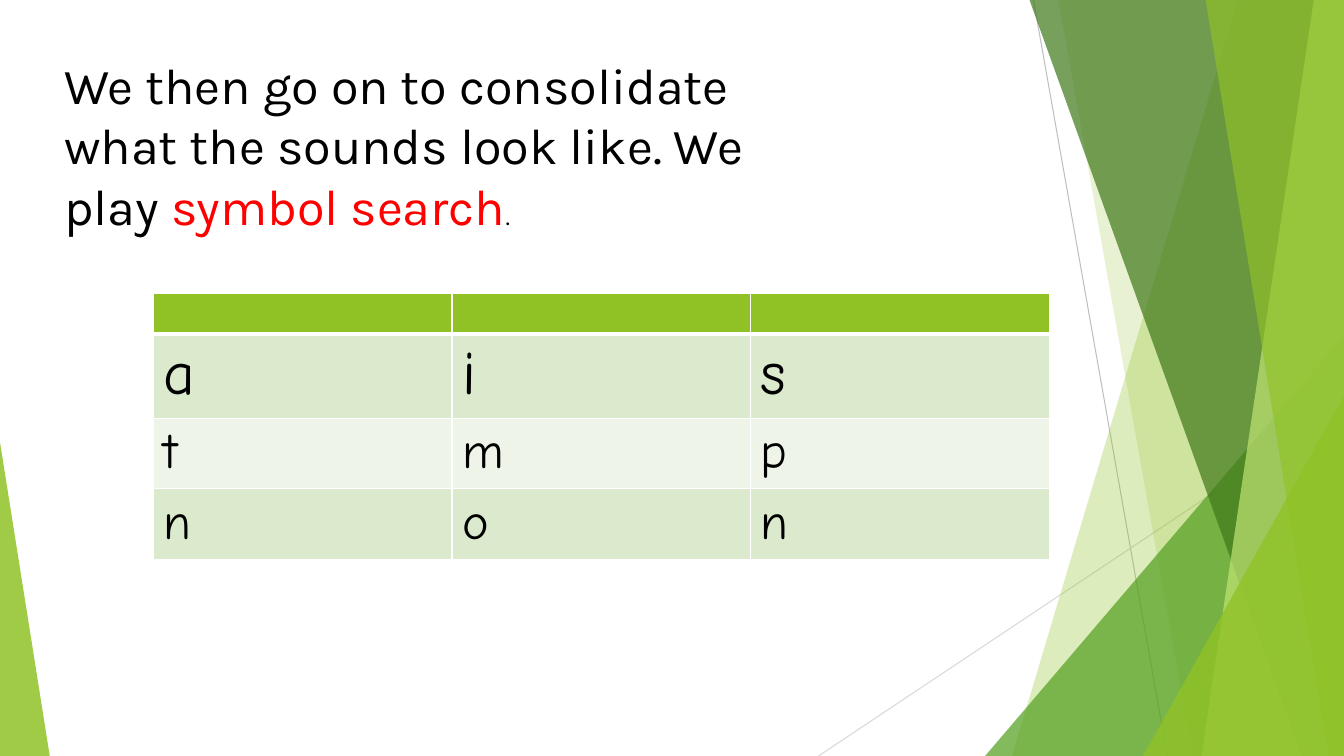
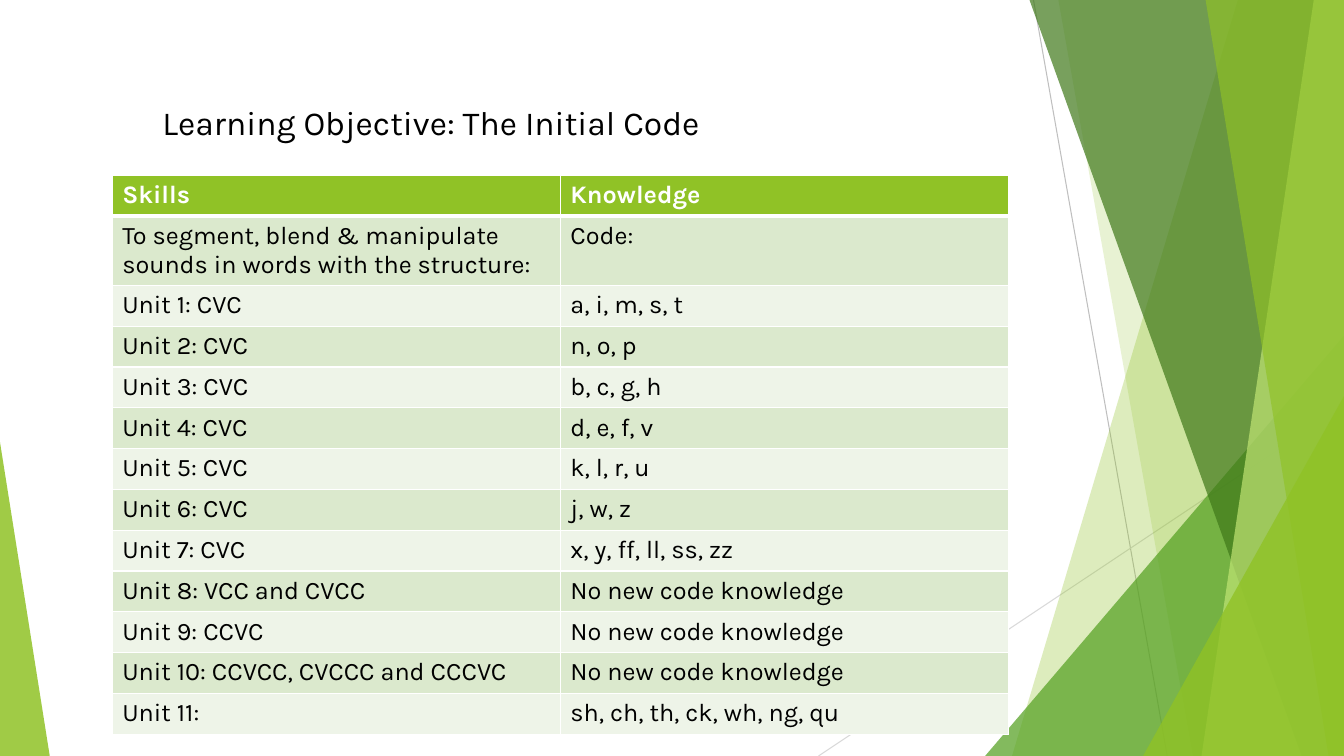
from dataclasses import dataclass

from lxml import etree
from pptx import Presentation
from pptx.dml.color import RGBColor
from pptx.enum.shapes import MSO_CONNECTOR, MSO_SHAPE
from pptx.oxml.ns import qn
from pptx.util import Inches, Pt

STRAIGHT = MSO_CONNECTOR.STRAIGHT
TRIANGLE = MSO_SHAPE.ISOSCELES_TRIANGLE
WIDTH, HEIGHT = Inches(13.33), Inches(7.5)
BLANK_LAYOUT = 6


@dataclass(frozen=True)
class Theme:
    """Colours, fonts and type sizes of the deck."""

    lime: str = "90C226"
    pale_lime: str = "C0E474"
    green: str = "54A021"
    forest: str = "3F7819"
    odd_band: str = "DBE9CD"
    even_band: str = "EEF4E8"
    white: str = "FFFFFF"
    black: str = "000000"
    red: str = "FF0000"
    dark_line: str = "BFBFBF"
    light_line: str = "D9D9D9"
    text_font: str = "Karla"
    letter_font: str = "Comic Neue"
    body: int = 18
    heading: int = 24
    statement: int = 36
    large_letter: int = 44
    thin: float = 1
    thick: float = 3


THEME = Theme()


@dataclass(frozen=True)
class Box:
    """A region given in percent of the slide's width and height."""

    left: float
    top: float
    width: float
    height: float

    def emu(self):
        """Return left, top, width and height as lengths."""
        return (*point(self.left, self.top), *point(self.width, self.height))

    def spot(self, x, y):
        """Return the point at x and y percent of this region."""
        return point(self.left + self.width * x / 100, self.top + self.height * y / 100)

    def inner(self, left, top, width, height):
        """Return a region given in percent of this one."""
        return Box(self.left + self.width * left / 100, self.top + self.height * top / 100,
                   self.width * width / 100, self.height * height / 100)


def point(x, y):
    """Turn percentages of the slide into a pair of lengths."""
    return round(WIDTH * x / 100), round(HEIGHT * y / 100)


SLIDE_BOX = Box(0, 0, 100, 100)


def add_text(paragraph, text, *, size=THEME.body, color=THEME.black,
             font=THEME.text_font, bold=False):
    """Append one formatted run to a paragraph."""
    run = paragraph.add_run()
    run.text = text
    run.font.size = Pt(size)
    run.font.name = font
    run.font.bold = bold
    run.font.color.rgb = RGBColor.from_string(color)


def add_text_box(slide, box, *runs):
    """Place a wrapped text box holding (text, format) runs."""
    frame = slide.shapes.add_textbox(*box.emu()).text_frame
    frame.word_wrap = True
    for text, style in runs:
        add_text(frame.paragraphs[0], text, **style)


def paint(shape, color, opacity):
    """Give a shape a translucent fill without line or shadow."""
    shape.shadow.inherit = False
    shape.line.fill.background()
    shape.fill.solid()
    shape.fill.fore_color.rgb = RGBColor.from_string(color)
    tint = shape.element.spPr.find(qn("a:solidFill"))[0]
    etree.SubElement(tint, qn("a:alpha")).set("val", str(opacity * 1000))


def add_hairline(slide, box, start, end, color):
    """Draw a thin straight line between two spots of the box."""
    line = slide.shapes.add_connector(STRAIGHT, *box.spot(*start), *box.spot(*end))
    line.line.color.rgb = RGBColor.from_string(color)
    line.line.width = Pt(0.75)
    etree.SubElement(line.element.spPr, qn("a:effectLst"))


def add_veil(slide, box, top_left, bottom_left, color, opacity):
    """Draw a slanted band that runs to the right edge of the box."""
    corners = [box.spot(*spot) for spot in
               ((top_left, 0), (100, 0), (100, 100), (bottom_left, 100))]
    builder = slide.shapes.build_freeform(*corners[0])
    builder.add_line_segments(corners[1:], close=True)
    paint(builder.convert_to_shape(), color, opacity)


def add_wedge(slide, box, apex, color, opacity):
    """Draw a triangle whose apex lies at a share of its width."""
    wedge = slide.shapes.add_shape(TRIANGLE, *box.emu())
    wedge.adjustments[0] = apex
    paint(wedge, color, opacity)


def draw_facets(slide, box):
    """Draw the green facets and hairlines in the box."""
    add_hairline(slide, box, (76.9, 0), (86.85, 100), THEME.dark_line)
    add_hairline(slide, box, (100, 53.7), (60.9, 100), THEME.light_line)
    add_veil(slide, box, 92.1, 75.3, THEME.lime, 30)
    add_veil(slide, box, 78.75, 88.75, THEME.lime, 20)
    add_wedge(slide, box.inner(73.3, 44.4, 26.7, 55.6), 1, THEME.green, 72)
    add_veil(slide, box, 76.6, 96.85, THEME.forest, 70)
    add_veil(slide, box, 97.75, 89.4, THEME.pale_lime, 70)
    add_veil(slide, box, 89.7, 98.85, THEME.lime, 65)
    add_wedge(slide, box.inner(85.05, 52.4, 14.95, 47.6), 1, THEME.lime, 80)
    add_wedge(slide, box.inner(0, 58.5, 3.7, 41.5), 0, THEME.lime, 85)


def share_facets(slide, layout):
    """Move the facets from a new slide to the layout all slides use."""
    for placeholder in list(layout.placeholders):
        layout.shapes.element.remove(placeholder.element)
    draw_facets(slide, SLIDE_BOX)
    for shape in list(slide.shapes):
        layout.shapes.element.append(shape.element)


def add_borders(cell, top, bottom):
    """Rule a cell in white, with its own top and bottom widths."""
    properties = cell._tc.get_or_add_tcPr()
    for side, width in (("L", THEME.thin), ("R", THEME.thin), ("T", top), ("B", bottom)):
        border = etree.SubElement(properties, qn(f"a:ln{side}"), w=str(Pt(width)))
        fill = etree.SubElement(border, qn("a:solidFill"))
        etree.SubElement(fill, qn("a:srgbClr"), val=THEME.white)


def add_banded_table(slide, box, rows, heights, styles):
    """Place a table with a lime header and alternating bands."""
    table = slide.shapes.add_table(len(rows), len(rows[0]), *box.emu()).table
    for index, (texts, height, style) in enumerate(zip(rows, heights, styles)):
        table.rows[index].height = point(0, height)[1]
        band = THEME.odd_band if index % 2 else THEME.even_band
        for column, text in enumerate(texts):
            cell = table.cell(index, column)
            add_borders(cell, THEME.thick if index == 1 else THEME.thin,
                        THEME.thin if index else THEME.thick)
            cell.fill.solid()
            cell.fill.fore_color.rgb = RGBColor.from_string(band if index else THEME.lime)
            if text:
                add_text(cell.text_frame.paragraphs[0], text, **style)


def fill_symbol_search(slide, box):
    """Lay out the symbol search statement and its letter grid."""
    large = {"size": THEME.statement}
    add_text_box(slide, box.inner(4.05, 6.5, 54.75, 25.6),
                 ("We then go on to consolidate what the sounds look like. We play ", large),
                 ("symbol search", {**large, "color": THEME.red}),
                 (".", {}))
    letter = {"size": THEME.statement, "font": THEME.letter_font}
    first = {**letter, "size": THEME.large_letter}
    add_banded_table(slide, box.inner(11.4, 38.8, 66.7, 35.1),
                     [("", "", ""), "ais", "tmp", "non"],
                     [5.4, 11.1, 9.3, 9.3],
                     [{}, first, letter, letter])


def fill_initial_code(slide, box):
    """Lay out the learning objective and its table of units."""
    no_new = "No new code knowledge"
    units = [
        ("CVC", "a, i, m, s, t"),
        ("CVC", "n, o, p"),
        ("CVC", "b, c, g, h"),
        ("CVC", "d, e, f, v"),
        ("CVC", "k, l, r, u"),
        ("CVC", "j, w, z"),
        ("CVC", "x, y, ff, ll, ss, zz"),
        ("VCC and CVCC", no_new),
        ("CCVC", no_new),
        ("CCVCC, CVCCC and CCCVC", no_new),
        ("", "sh, ch, th, ck, wh, ng, qu"),
    ]
    rows = [("Skills", "Knowledge"),
            ("To segment, blend & manipulate sounds in words with the structure:", "Code:")]
    rows += [(f"Unit {number}: {structure}".strip(), code)
             for number, (structure, code) in enumerate(units, 1)]
    header = {"color": THEME.white, "bold": True}
    add_banded_table(slide, box.inner(8.35, 23.2, 66.7, 73.9), rows,
                     [5.4, 9.1] + [5.4] * len(units),
                     [header] + [{}] * (len(rows) - 1))
    add_text_box(slide, box.inner(11.35, 12.8, 47.6, 6.7),
                 ("Learning Objective: The Initial Code", {"size": THEME.heading}))


def main():
    """Build and save the presentation."""
    presentation = Presentation()
    presentation.slide_width, presentation.slide_height = WIDTH, HEIGHT
    layout = presentation.slide_layouts[BLANK_LAYOUT]
    slides = [presentation.slides.add_slide(layout) for _ in range(2)]
    share_facets(slides[0], layout)
    for slide, fill_slide in zip(slides, (fill_symbol_search, fill_initial_code)):
        fill_slide(slide, SLIDE_BOX)
    presentation.save("out.pptx")


if __name__ == "__main__":
    main()
